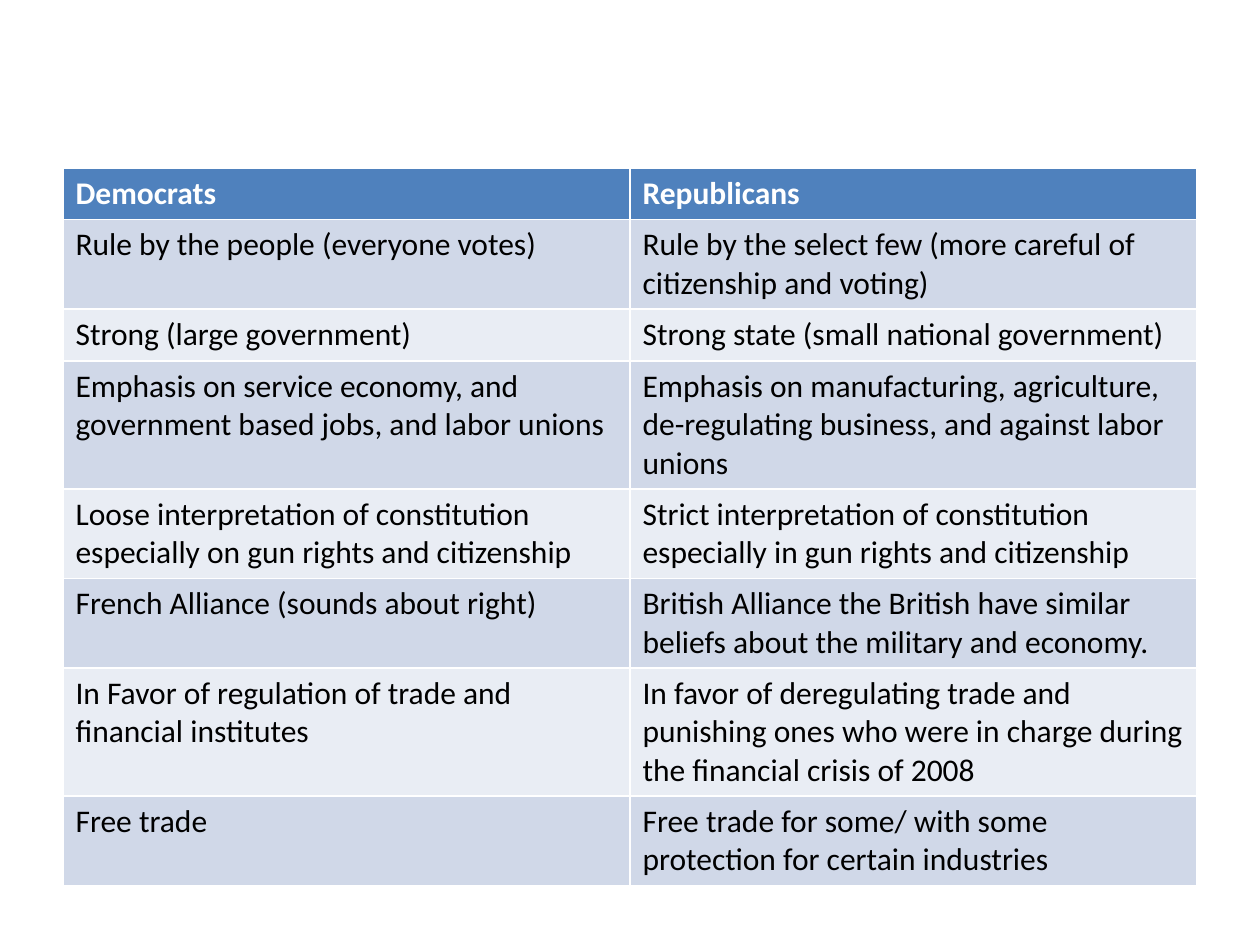
from pptx import Presentation
from pptx.dml.color import RGBColor
from pptx.util import Inches, Pt

BLUE = RGBColor(0x4F, 0x81, 0xBD)
DARK = RGBColor(0xD0, 0xD8, 0xE8)
LIGHT = RGBColor(0xE9, 0xED, 0xF4)
WHITE = RGBColor(0xFF, 0xFF, 0xFF)
BLACK = RGBColor(0x00, 0x00, 0x00)

VIEWS = [
    ("Democrats", "Republicans"),
    ("Rule by the people (everyone votes)",
     "Rule by the select few (more careful of citizenship and voting)"),
    ("Strong (large government)",
     "Strong state (small national government)"),
    ("Emphasis on service economy, and government based jobs, and labor unions",
     "Emphasis on manufacturing, agriculture, de-regulating business, and against labor unions"),
    ("Loose interpretation of constitution especially on gun rights and citizenship",
     "Strict interpretation of constitution especially in gun rights and citizenship"),
    ("French Alliance (sounds about right)",
     "British Alliance the British have similar beliefs about the military and economy."),
    ("In Favor of regulation of trade and financial institutes",
     "In favor of deregulating trade and punishing ones who were in charge during the financial crisis of 2008"),
    ("Free trade",
     "Free trade for some/ with some protection for certain industries"),
]


def fill_cell(cell, text, back, ink, bold):
    """Write one cell in its colours."""
    cell.fill.solid()
    cell.fill.fore_color.rgb = back
    cell.text_frame.text = text
    font = cell.text_frame.paragraphs[0].runs[0].font
    font.name, font.size, font.bold = "Calibri", Pt(18), bold
    font.color.rgb = ink


def add_views(slide, left, top, width, height):
    """Place the table of party views in the given box."""
    frame = slide.shapes.add_table(len(VIEWS), len(VIEWS[0]), left, top, width, height)
    table = frame.table
    for row, texts in enumerate(VIEWS):
        table.rows[row].height = Inches(0.41)
        head = row == 0
        back = BLUE if head else DARK if row % 2 else LIGHT
        for cell, text in zip(table.rows[row].cells, texts):
            fill_cell(cell, text, back, WHITE if head else BLACK, head)
    frame.height = height


def main():
    """Build and save the slide."""
    deck = Presentation()
    deck.slide_width, deck.slide_height = Inches(10), Inches(7.5)
    slide = deck.slides.add_slide(deck.slide_layouts[6])
    wide, high = deck.slide_width, deck.slide_height
    add_views(slide, int(wide * 0.05), int(high / 5.625), int(wide * 0.9), int(high * 0.75))
    deck.save("out.pptx")


if __name__ == "__main__":
    main()
